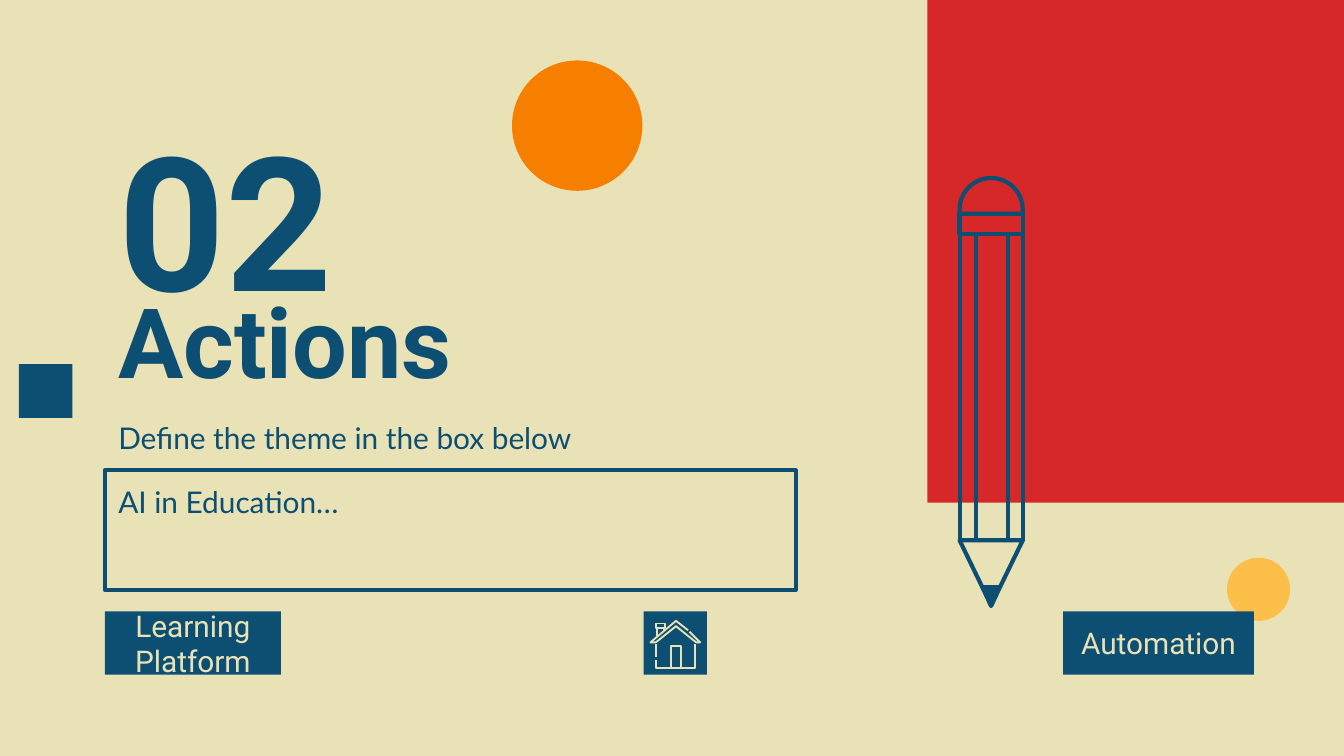
from math import cos, pi, sin

from lxml.etree import SubElement
from pptx import Presentation
from pptx.dml.color import RGBColor
from pptx.enum.shapes import MSO_CONNECTOR, MSO_SHAPE
from pptx.enum.text import MSO_ANCHOR, MSO_AUTO_SIZE, PP_ALIGN
from pptx.oxml.ns import qn
from pptx.util import Inches, Pt

NAVY, CREAM, RED, ORANGE, YELLOW = "0C4F72", "EAE2B7", "D62828", "F77F00", "FCBF49"
WIDTH = 10
HEIGHT = WIDTH * 9 / 16
MARGIN, COLUMN = 0.78, 5.14
BUTTON_TOP, BUTTON_HEIGHT = 4.55, 0.47
OUTLINE = 2.25

HEADINGS = {
    0: ("Actions", 2.11, 0.83, MSO_ANCHOR.MIDDLE, {"name": "Roboto", "size": Pt(52), "bold": True}),
    1: ("02", 0.68, 1.55, MSO_ANCHOR.TOP, {"name": "Roboto", "size": Pt(100), "bold": True}),
    2: ("AI in Education…", 3.5, 0.89, MSO_ANCHOR.TOP, {"name": "Lato", "size": Pt(16), "bold": False}),
    3: ("Define the theme in the box below", 3.02, 0.4, MSO_ANCHOR.TOP,
        {"name": "Lato", "size": Pt(16), "bold": False}),
}
THEME_BOX = 2
DECORATIONS = [
    (MSO_SHAPE.RECTANGLE, 0.14, 2.71, 0.4, NAVY),
    (MSO_SHAPE.OVAL, 3.81, 0.45, 0.97, ORANGE),
    (MSO_SHAPE.OVAL, 9.13, 4.15, 0.47, YELLOW),
]
BUTTONS = [("Learning Platform", MARGIN, 1.31), ("", 4.79, BUTTON_HEIGHT), ("Automation", 7.91, 1.42)]

PENCIL_EDGES = [7.14, 7.26, 7.5, 7.61]
FERRULE_TOP, BODY_TOP, BODY_BOTTOM, LEAD_TOP, POINT = 1.59, 1.74, 4.02, 4.37, 4.51
LEAD_LEFT, LEAD_RIGHT = 7.31, 7.44

HOUSE = {
    "roof": [(5.12, 4.69), (5.03, 4.62), (4.84, 4.78), (4.88, 4.78), (5.03, 4.66),
             (5.18, 4.78), (5.21, 4.78), (5.13, 4.7)],
    "walls": [(4.88, 4.91), (4.88, 4.97), (5.17, 4.97), (5.17, 4.79)],
    "door": [(4.99, 4.97), (4.99, 4.81), (5.07, 4.81), (5.07, 4.97)],
    "chimney cap": [(4.88, 4.64), (4.95, 4.64), (4.95, 4.67), (4.88, 4.67), (4.88, 4.64)],
    "chimney left": [(4.89, 4.67), (4.89, 4.73)],
    "chimney right": [(4.94, 4.67), (4.94, 4.69)],
    "left wall": [(4.88, 4.79), (4.88, 4.89)],
}


def color(value):
    """Turn a hex string into a colour."""
    return RGBColor.from_string(value)


def paint(shape, fill=None, line=None, width=OUTLINE):
    """Set fill and line, and drop the shadow."""
    shape.shadow.inherit = False
    if fill:
        shape.fill.solid()
        shape.fill.fore_color.rgb = color(fill)
    else:
        shape.fill.background()
    if line:
        shape.line.color.rgb = color(line)
        shape.line.width = Pt(width)
    else:
        shape.line.fill.background()


def add_block(shapes, kind, box, **style):
    """Add a painted preset shape at a box in inches."""
    shape = shapes.add_shape(kind, *map(Inches, box))
    paint(shape, **style)
    return shape


def add_outline(shapes, points, closed=True, **style):
    """Add a painted freeform through points in inches."""
    corners = [(Inches(x), Inches(y)) for x, y in points]
    builder = shapes.build_freeform(*corners[0])
    builder.add_line_segments(corners[1:], close=closed)
    paint(builder.convert_to_shape(), **style)


def add_stroke(shapes, start, end, line, width):
    """Add a straight line without a shadow."""
    connector = shapes.add_connector(MSO_CONNECTOR.STRAIGHT, *map(Inches, start + end))
    connector.line.color.rgb = color(line)
    connector.line.width = Pt(width)
    SubElement(connector._element.spPr, qn("a:effectLst"))


def write(shape, text, anchor, alignment, font, ink):
    """Fill a shape with one formatted paragraph."""
    frame = shape.text_frame
    frame_format = {"word_wrap": True, "auto_size": MSO_AUTO_SIZE.NONE, "vertical_anchor": anchor}
    for side in ("left", "right", "top", "bottom"):
        frame_format[f"margin_{side}"] = Inches(0.1)
    for name, value in frame_format.items():
        setattr(frame, name, value)
    frame.text = text
    paragraph = frame.paragraphs[0]
    properties = paragraph._p.get_or_add_pPr()
    properties.set("marL", "0")
    properties.set("indent", "0")
    SubElement(properties, qn("a:buNone"))
    paragraph.alignment = alignment
    paragraph.space_before = Pt(0)
    run_font = paragraph.runs[0].font
    for name, value in font.items():
        setattr(run_font, name, value)
    run_font.color.rgb = color(ink)


def add_headings(slide):
    """Place the title and body placeholders in the left column."""
    for placeholder in list(slide.placeholders):
        index = placeholder.placeholder_format.idx
        if index not in HEADINGS:
            placeholder._element.getparent().remove(placeholder._element)
            continue
        text, top, height, anchor, font = HEADINGS[index]
        box = dict(left=MARGIN, top=top, width=COLUMN, height=height)
        for name, value in box.items():
            setattr(placeholder, name, Inches(value))
        write(placeholder, text, anchor, PP_ALIGN.LEFT, font, NAVY)
        if index == THEME_BOX:
            placeholder.line.color.rgb = color(NAVY)
            placeholder.line.width = Pt(OUTLINE)


def add_pencil(slide):
    """Draw the pencil from its edges, eraser and tip."""
    shapes = slide.shapes.add_group_shape().shapes
    left, right = PENCIL_EDGES[0], PENCIL_EDGES[-1]
    facets = [(x, BODY_TOP, following - x, BODY_BOTTOM - BODY_TOP)
              for x, following in zip(PENCIL_EDGES, PENCIL_EDGES[1:])]
    ferrule = (left, FERRULE_TOP, right - left, BODY_TOP - FERRULE_TOP)
    for box in facets + [ferrule]:
        add_block(shapes, MSO_SHAPE.RECTANGLE, box, line=NAVY)
    center, radius, steps = (left + right) / 2, (right - left) / 2, 32
    arc = [(center + radius * cos(pi * step / steps), 1.56 - radius * sin(pi * step / steps))
           for step in range(steps + 1)]
    add_outline(shapes, arc + [(left, FERRULE_TOP), (right, FERRULE_TOP)], line=NAVY)
    lead = [(LEAD_LEFT, LEAD_TOP), (LEAD_RIGHT, LEAD_TOP)]
    add_outline(shapes, lead + [(right, BODY_BOTTOM), (left, BODY_BOTTOM)], line=NAVY)
    add_outline(shapes, lead + [(center, POINT)], fill=NAVY, line=NAVY)


def add_house(slide):
    """Draw the home icon with thin strokes."""
    shapes = slide.shapes.add_group_shape().shapes
    for points in HOUSE.values():
        if len(points) == 2:
            add_stroke(shapes, *points, line=CREAM, width=1)
        else:
            add_outline(shapes, points, closed=False, line=CREAM, width=1)


def main():
    """Build the section slide."""
    presentation = Presentation()
    presentation.slide_width, presentation.slide_height = Inches(WIDTH), Inches(HEIGHT)
    slide = presentation.slides.add_slide(presentation.slide_layouts.get_by_name("Comparison"))
    slide.background.fill.solid()
    slide.background.fill.fore_color.rgb = color(CREAM)
    add_headings(slide)
    add_block(slide.shapes, MSO_SHAPE.RECTANGLE, (6.9, 0, WIDTH - 6.9, 3.74), fill=RED)
    add_pencil(slide)
    for kind, left, top, size, fill in DECORATIONS:
        add_block(slide.shapes, kind, (left, top, size, size), fill=fill)
    for text, left, width in BUTTONS:
        button = add_block(slide.shapes, MSO_SHAPE.RECTANGLE,
                           (left, BUTTON_TOP, width, BUTTON_HEIGHT), fill=NAVY)
        if text:
            write(button, text, MSO_ANCHOR.MIDDLE, PP_ALIGN.CENTER,
                  {"name": "Roboto", "size": Pt(16)}, CREAM)
    add_house(slide)
    presentation.save("out.pptx")


if __name__ == "__main__":
    main()
